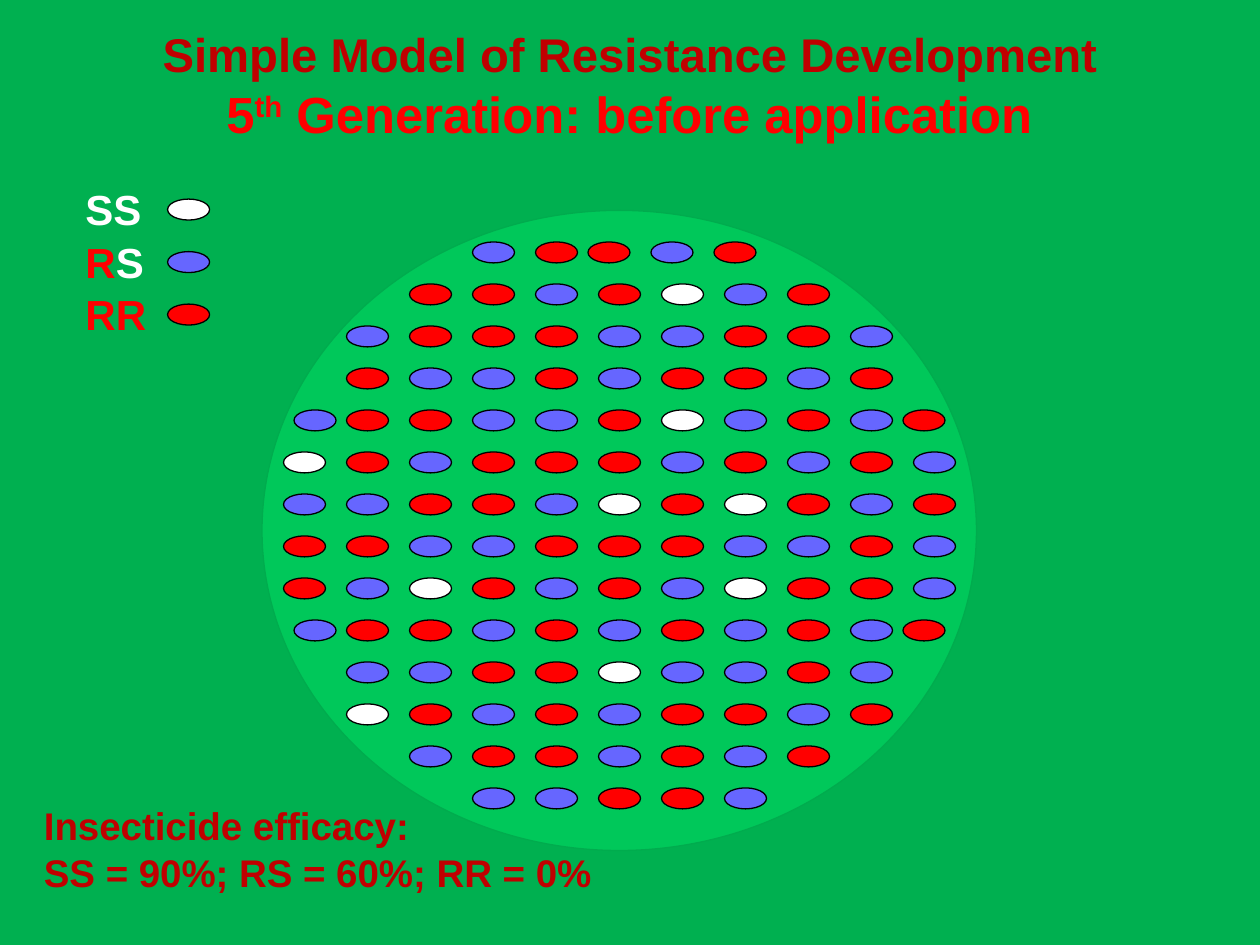
from pptx import Presentation
from pptx import util as u
from pptx.dml.color import RGBColor
from pptx.enum import shapes, text

SLIDE_W, SLIDE_H = 10, 7.5
COLORS = {
    "background": "00B050", "field": "00C85A", "field_edge": "00AC4E",
    "outline": "000000", "heading": "C00000",
    "S": "FFFFFF", "H": "6666FF", "R": "FF0000",
}

# Insects by genotype: S = SS, H = RS, R = RR, dot = empty grid cell
POPULATION = [
    "...HRRHR...",
    "..RRHRSHR..",
    ".HRRRHHRRH.",
    ".RHHRHRRHR.",
    "HRRHHRSHRHR",
    "SRHRRRHRHRH",
    "HHRRHSRSRHR",
    "RRHHRRRHHRH",
    "RHSRHRHSRRH",
    "HRRHRHRHRHR",
    ".HHRRSHHRH.",
    ".SRHRHRRHR.",
    "..HRRHRHR..",
    "...HHRRH...",
]
GRID_LEFT, GRID_TOP = 2.25, 1.92
COLUMN, ROW = SLIDE_W / 20, SLIDE_W / 30
INSECT_W, INSECT_H = COLUMN * 2 / 3, ROW / 2
# Sideways nudges, in columns, that break the regular grid
NUDGES = {(0, 5): -1 / 6, (0, 6): -1 / 6, (0, 7): -1 / 6,
          (4, 0): 1 / 6, (4, 10): -1 / 6, (9, 0): 1 / 6, (9, 10): -1 / 6}

LEGEND = [[("SS", "S")], [("R", "R"), ("S", "S")], [("RR", "R")]]


def rgb(name):
    return RGBColor.from_string(COLORS[name])


def add_oval(slide, left, top, width, height, fill, edge="outline"):
    oval = slide.shapes.add_shape(
        shapes.MSO_SHAPE.OVAL, *map(u.Inches, (left, top, width, height)))
    oval.shadow.inherit = False
    oval.fill.solid()
    oval.fill.fore_color.rgb = rgb(fill)
    oval.line.color.rgb = rgb(edge)
    oval.line.width = u.Pt(0.75)


def add_text(slide, left, top, width, height, lines, align, **frame_format):
    """Each line is a list of (wording, color, size, superscript) runs."""
    frame = slide.shapes.add_textbox(
        *map(u.Inches, (left, top, width, height))).text_frame
    for name, value in frame_format.items():
        setattr(frame, name, value)
    for index, line in enumerate(lines):
        paragraph = frame.add_paragraph() if index else frame.paragraphs[0]
        paragraph.alignment = align
        for wording, color, size, superscript in line:
            run = paragraph.add_run()
            run.text = wording
            font_format = {"name": "Arial", "size": u.Pt(size), "bold": True}
            for name, value in font_format.items():
                setattr(run.font, name, value)
            run.font.color.rgb = rgb(color)
            if superscript:
                run._r.get_or_add_rPr().set("baseline", "30000")


def add_population(slide):
    for row, genotypes in enumerate(POPULATION):
        for column, genotype in enumerate(genotypes):
            if genotype == ".":
                continue
            place = column + NUDGES.get((row, column), 0)
            add_oval(slide, GRID_LEFT + place * COLUMN, GRID_TOP + row * ROW,
                     INSECT_W, INSECT_H, genotype)


def add_legend(slide):
    for row, (label, genotype) in enumerate(zip(LEGEND, "SHR")):
        offset = row * SLIDE_H / 18
        add_oval(slide, 1.33, 1.58 + offset, INSECT_W, INSECT_H, genotype)
        runs = [(letters, color, 24, False) for letters, color in label]
        add_text(slide, 0.58, 1.41 + offset, 0.68, 0.51, [runs],
                 text.PP_ALIGN.LEFT, word_wrap=False,
                 auto_size=text.MSO_AUTO_SIZE.SHAPE_TO_FIT_TEXT)


def main():
    prs = Presentation()
    prs.slide_width, prs.slide_height = u.Inches(SLIDE_W), u.Inches(SLIDE_H)
    slide = prs.slides.add_slide(prs.slide_layouts[6])
    slide.background.fill.solid()
    slide.background.fill.fore_color.rgb = rgb("background")

    # Field with its insects
    add_oval(slide, 2.08, 1.67, 5.67, 5.08, "field", "field_edge")
    add_population(slide)
    add_legend(slide)

    # Title
    add_text(slide, SLIDE_W * 0.05, 0.17, SLIDE_W * 0.9, 1, [
        [("Simple Model of Resistance Development", "heading", 27, False)],
        [("5", "R", 29, False), ("th", "R", 29, True),
         (" Generation: before application", "R", 29, False)],
    ], text.PP_ALIGN.CENTER, word_wrap=True,
        vertical_anchor=text.MSO_ANCHOR.MIDDLE)

    # Efficacy by genotype
    add_text(slide, 0.25, 6.32, 4.6, 0.84, [
        [("Insecticide efficacy:", "heading", 22, False)],
        [("SS = 90%; RS = 60%; RR = 0%", "heading", 22, False)],
    ], text.PP_ALIGN.LEFT, word_wrap=False,
        auto_size=text.MSO_AUTO_SIZE.SHAPE_TO_FIT_TEXT)

    prs.save("out.pptx")


if __name__ == "__main__":
    main()
